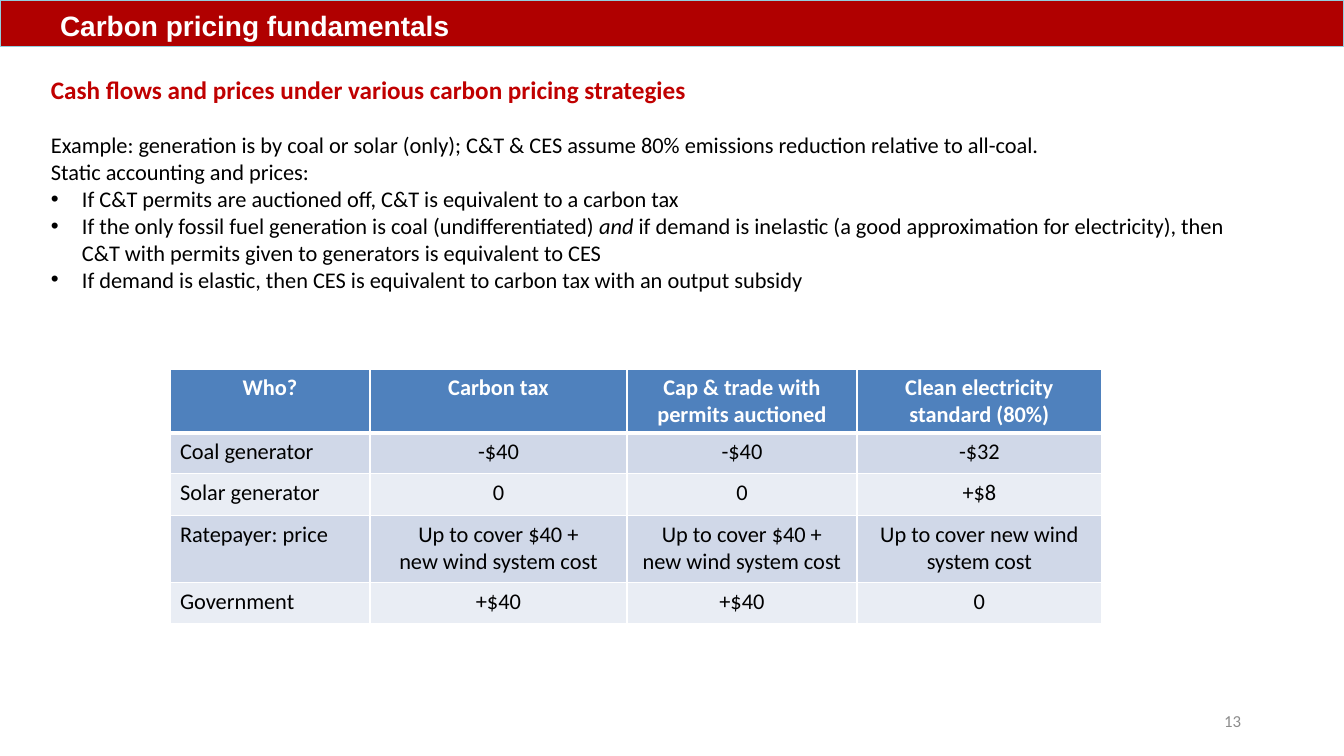
import pptx
import pptx.dml.color
import pptx.enum.text
import pptx.oxml
import pptx.oxml.ns
import pptx.util

ALIGN = pptx.enum.text.PP_ALIGN
ANCHOR = pptx.enum.text.MSO_ANCHOR
SCALE = 12192000 / 1344


def px(n):
    return pptx.util.Emu(round(n * SCALE))


def color(value):
    return pptx.dml.color.RGBColor.from_string(value)


class Deck:
    font = "Calibri"
    size = 16
    ink = "000000"
    white = "FFFFFF"
    red = "B00000"
    accent = "C00000"
    header = "4F81BD"
    bands = ("D0D8E8", "E9EDF4")

    def __init__(self):
        self.prs = pptx.Presentation()
        self.prs.slide_width, self.prs.slide_height = px(1344), px(756)
        self.s = self.prs.slides.add_slide(self.prs.slide_layouts[5])

    def place(self, sp, x, y, w, h):
        sp.left, sp.top, sp.width, sp.height = px(x), px(y), px(w), px(h)

    def run(self, p, text, size=None, c=None, bold=False, italic=False, font=None):
        r = p.add_run()
        r.text = text
        r.font.name = font or self.font
        r.font.size = pptx.util.Pt(size or self.size)
        r.font.bold, r.font.italic = bold, italic
        r.font.color.rgb = color(c or self.ink)

    def paragraphs(self, tf):
        yield tf.paragraphs[0]
        while True:
            yield tf.add_paragraph()

    def title(self, text, x, y, w, h, inset):
        sp = self.s.shapes.title
        self.place(sp, x, y, w, h)
        sp.fill.solid()
        sp.fill.fore_color.rgb = color(self.red)
        sp.line.color.rgb = color("93CDDD")
        sp.line.width = 0
        tf = sp.text_frame
        tf.auto_size = pptx.enum.text.MSO_AUTO_SIZE.NONE
        tf.vertical_anchor = ANCHOR.BOTTOM
        tf.margin_left = px(inset)
        p = tf.paragraphs[0]
        p.alignment = ALIGN.LEFT
        self.run(p, text, 20, self.white, bold=True, font="Arial")

    def text_box(self, x, y, w, h, anchor=ANCHOR.TOP):
        tf = self.s.shapes.add_textbox(px(x), px(y), px(w), px(h)).text_frame
        tf.word_wrap = True
        tf.vertical_anchor = anchor
        return tf

    def bullet(self, p, indent):
        pPr = p._p.get_or_add_pPr()
        pPr.set("marL", str(px(indent)))
        pPr.set("indent", str(-px(indent)))
        ns = pptx.oxml.ns.nsdecls("a")
        pPr.append(pptx.oxml.parse_xml(f'<a:buFont {ns} typeface="Arial"/>'))
        pPr.append(pptx.oxml.parse_xml(f'<a:buChar {ns} char="•"/>'))

    def borders(self, cell, top, bottom):
        tcPr = cell._tc.get_or_add_tcPr()
        ns = pptx.oxml.ns.nsdecls("a")
        for side, width in (("L", 1), ("R", 1), ("T", top), ("B", bottom)):
            tcPr.append(pptx.oxml.parse_xml(
                f'<a:ln{side} {ns} w="{pptx.util.Pt(width)}"><a:solidFill>'
                f'<a:srgbClr val="{self.white}"/></a:solidFill></a:ln{side}>'))

    def table(self, x, y, widths, heights, rows):
        table = self.s.shapes.add_table(
            len(heights), len(widths), px(x), px(y),
            px(sum(widths)), px(sum(heights))).table
        for column, w in zip(table.columns, widths):
            column.width = px(w)
        for i, (h, row) in enumerate(zip(heights, rows)):
            table.rows[i].height = px(h)
            head = i == 0
            for j, text in enumerate(row):
                cell = table.cell(i, j)
                self.borders(cell, 3 if i == 1 else 1, 3 if head else 1)
                cell.fill.solid()
                cell.fill.fore_color.rgb = color(
                    self.header if head else self.bands[(i - 1) % 2])
                for line, p in zip(text.split("\n"), self.paragraphs(cell.text_frame)):
                    p.alignment = ALIGN.CENTER if head or j else ALIGN.LEFT
                    self.run(p, line, c=self.white if head else self.ink, bold=head)


def main():
    deck = Deck()
    deck.title("Carbon pricing fundamentals", 0, 0, 1344, 47, 60)

    tf = deck.text_box(41, 69, 1211, 231)
    p = tf.paragraphs[0]
    deck.run(p, "Cash flows and prices under various carbon pricing strategies",
             18, deck.accent, bold=True)
    p = tf.add_paragraph()
    p.space_before = pptx.util.Pt(19.5)
    deck.run(p, "Example: generation is by coal or solar (only); C&T & CES assume "
                "80% emissions reduction relative to all-coal.")
    deck.run(tf.add_paragraph(), "Static accounting and prices:")
    bullets = [
        ["If C&T permits are auctioned off, C&T is equivalent to a carbon tax"],
        ["If the only fossil fuel generation is coal (undifferentiated) ", "and",
         " if demand is inelastic (a good approximation for electricity), then "
         "C&T with permits given to generators is equivalent to CES"],
        ["If demand is elastic, then CES is equivalent to carbon tax with an output subsidy"],
    ]
    for parts in bullets:
        p = tf.add_paragraph()
        deck.bullet(p, 31)
        for part in parts:
            deck.run(p, part, italic=part == "and")

    cost = "Up to cover $40 +\nnew wind system cost"
    deck.table(170, 369, [200, 257, 230, 245], [63, 41, 42, 67, 41], [
        ["Who?", "Carbon tax", "Cap & trade with permits auctioned",
         "Clean electricity standard (80%)"],
        ["Coal generator", "-$40", "-$40", "-$32"],
        ["Solar generator", "0", "0", "+$8"],
        ["Ratepayer: price", cost, cost, "Up to cover new wind system cost"],
        ["Government", "+$40", "+$40", "0"],
    ])

    p = deck.text_box(949, 701, 302, 40, ANCHOR.MIDDLE).paragraphs[0]
    p.alignment = ALIGN.RIGHT
    deck.run(p, "13", 12, "8C8C8C")

    deck.prs.save("out.pptx")


if __name__ == "__main__":
    main()
